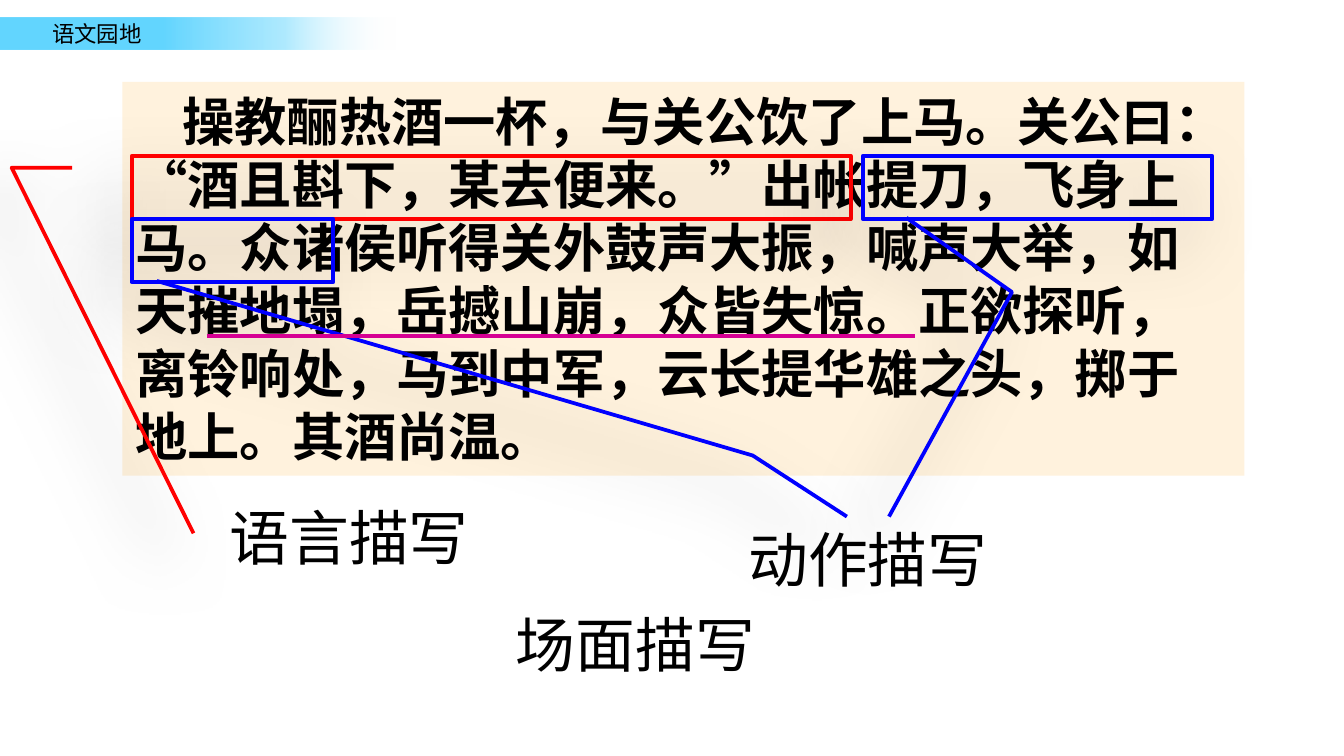
"""Build a Chinese reading slide with annotated passages."""
from lxml import etree
from pptx import Presentation
from pptx import util as u
from pptx.dml.color import RGBColor
from pptx.enum import lang, shapes, text
from pptx.oxml import parse_xml
from pptx.oxml.ns import nsdecls, qn

COLORS = {"ink": "000000", "panel": "FFF2DD", "speech": "FF0000",
          "action": "0000FF", "scene": "D60093"}
HANZI = "Noto Sans CJK SC"
LATIN = "Times New Roman"
HEADER = "语文园地"
PASSAGE = ("操教酾热酒一杯，与关公饮了上马。关公曰：“酒且斟下，某去便来。”出帐提刀，飞身上马。"
           "众诸侯听得关外鼓声大振，喊声大举，如天摧地塌，岳撼山崩，众皆失惊。正欲探听，"
           "离铃响处，马到中军，云长提华雄之头，掷于地上。其酒尚温。")
LABELS = [("语言描写", 1.61, 3.68), ("动作描写", 5.47, 3.84), ("场面描写", 3.74, 4.47)]
CALLOUTS = [
    ("speech", 0.98, 1.16, 5.35, (18.8, -8.3, 18.8, -16.7, 597.5, 8.6)),
    ("action", 6.42, 1.16, 2.6, (98.1, 12.5, 215.7, 42.7, 571.1, 7.5)),
    ("action", 0.98, 1.63, 1.5, (98.1, 12.5, 374.4, 308.1, 471.1, 354.8)),
]
FADE = [(40, "63D6FF", 100), (70, "97E4FF", 76), (97, "FFFFFF", 0)]


def inches(*lengths):
    return [u.Inches(length) for length in lengths]


def color(name):
    return RGBColor.from_string(COLORS[name])


def write(shape, words, size, font, bold=False, wrap=True):
    frame = shape.text_frame
    frame.text = words
    frame.word_wrap = wrap
    frame.vertical_anchor = text.MSO_ANCHOR.TOP
    para = frame.paragraphs[0]
    para.alignment = text.PP_ALIGN.LEFT
    span = para.runs[0]
    span.font.size = u.Pt(size)
    span.font.bold = bold
    span.font.name = font
    span.font.color.rgb = color("ink")
    span.font.language_id = lang.MSO_LANGUAGE_ID.SIMPLIFIED_CHINESE
    east_asian = etree.SubElement(span.font._element, qn("a:ea"))
    east_asian.set("typeface", HANZI)
    return para


def add_banner(page):
    banner = page.shapes.add_shape(shapes.MSO_SHAPE.RECTANGLE, *inches(0, 0.13, 3.03, 0.24))
    banner.shadow.inherit = False
    banner.line.fill.background()
    stops = "".join(
        f'<a:gs pos="{place * 1000}"><a:srgbClr val="{shade}">'
        f'<a:alpha val="{alpha * 1000}"/></a:srgbClr></a:gs>'
        for place, shade, alpha in FADE)
    banner._element.spPr.find(qn("a:prstGeom")).addnext(parse_xml(
        f'<a:gradFill {nsdecls("a")} rotWithShape="1"><a:gsLst>{stops}</a:gsLst>'
        '<a:lin ang="0" scaled="0"/></a:gradFill>'))
    title = page.shapes.add_textbox(*inches(0.29, 0.1, 0.87, 0.3))
    write(title, HEADER, 12, HANZI, wrap=False)


def add_passage(page):
    panel = page.shapes.add_shape(shapes.MSO_SHAPE.RECTANGLE, *inches(0.91, 0.61, 8.35, 2.93))
    panel.shadow.inherit = False
    panel.fill.solid()
    panel.fill.fore_color.rgb = color("panel")
    panel.line.fill.background()
    para = write(panel, PASSAGE, 28, HANZI, bold=True)
    para.line_spacing = u.Pt(33.75)
    para._p.get_or_add_pPr().set("indent", str(u.Inches(0.35)))


def add_callout(page, tone, left, top, width, pointer):
    callout = page.shapes.add_shape(shapes.MSO_SHAPE.LINE_CALLOUT_2,
                                    *inches(left, top, width, 0.47))
    for index, percent in enumerate(pointer):
        callout.adjustments[index] = percent / 100
    callout.fill.background()
    callout.line.color.rgb = color(tone)
    callout.line.width = u.Pt(2)
    callout.shadow.inherit = False
    effects = callout._element.spPr.find(qn("a:effectLst"))
    effects.append(parse_xml(
        f'<a:outerShdw {nsdecls("a")} blurRad="{u.Pt(35)}" dist="{u.Pt(20)}" dir="8100000">'
        f'<a:srgbClr val="{COLORS["ink"]}"><a:alpha val="50000"/></a:srgbClr></a:outerShdw>'))


def add_underline(page):
    underline = page.shapes.add_connector(shapes.MSO_CONNECTOR.STRAIGHT,
                                          *inches(1.54, 2.5, 6.81, 2.5))
    underline.line.color.rgb = color("scene")
    underline.line.width = u.Pt(2.25)
    etree.SubElement(underline._element.spPr, qn("a:effectLst"))


def main():
    deck = Presentation()
    deck.slide_width = u.Inches(10)
    deck.slide_height = deck.slide_width * 9 // 16
    page = deck.slides.add_slide(deck.slide_layouts[6])
    add_banner(page)
    add_passage(page)
    for callout in CALLOUTS:
        add_callout(page, *callout)
    add_underline(page)
    for words, left, top in LABELS:
        label = page.shapes.add_textbox(*inches(left, top, 2.05, 0.64))
        write(label, words, 32, LATIN)
    deck.save("out.pptx")


if __name__ == "__main__":
    main()
